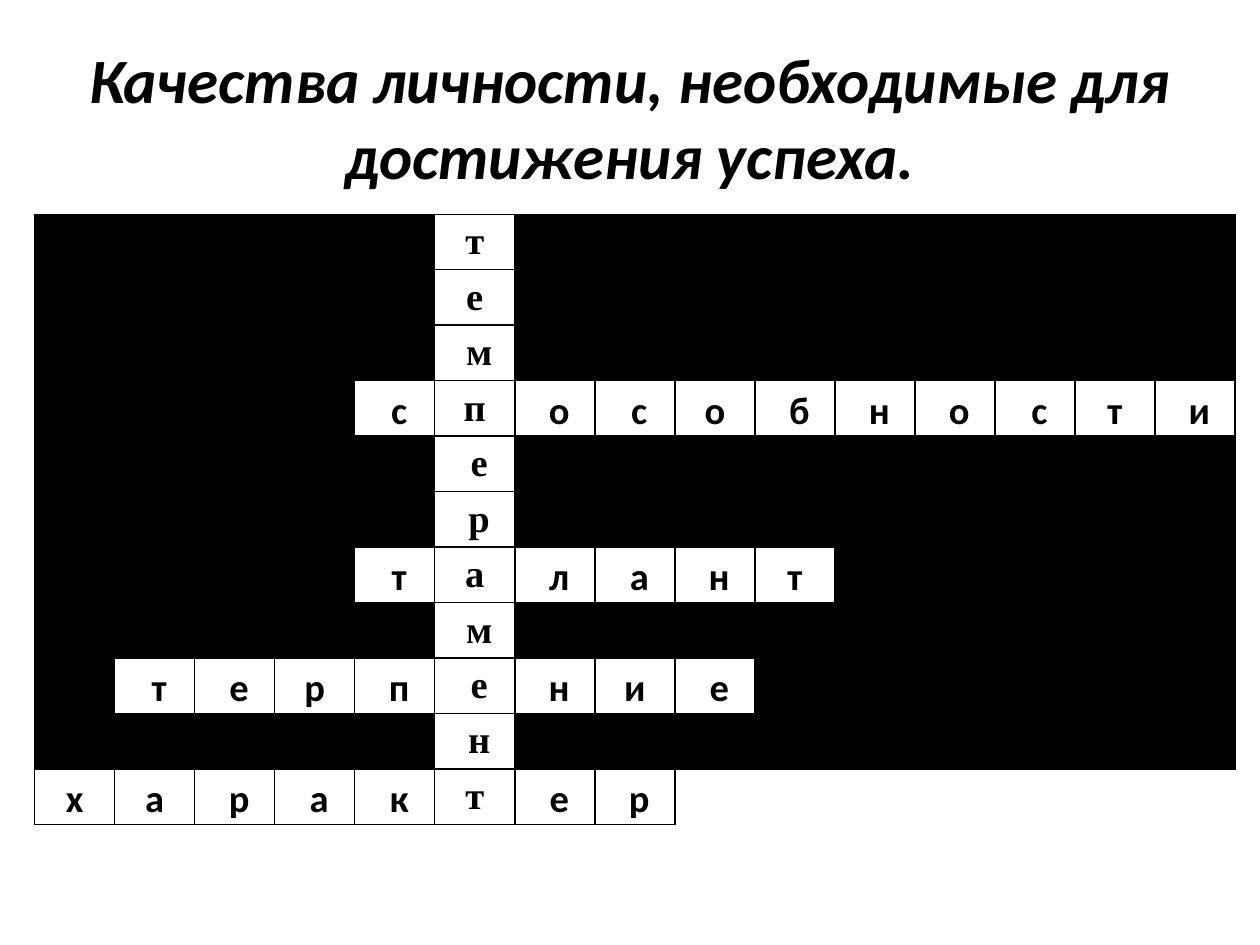
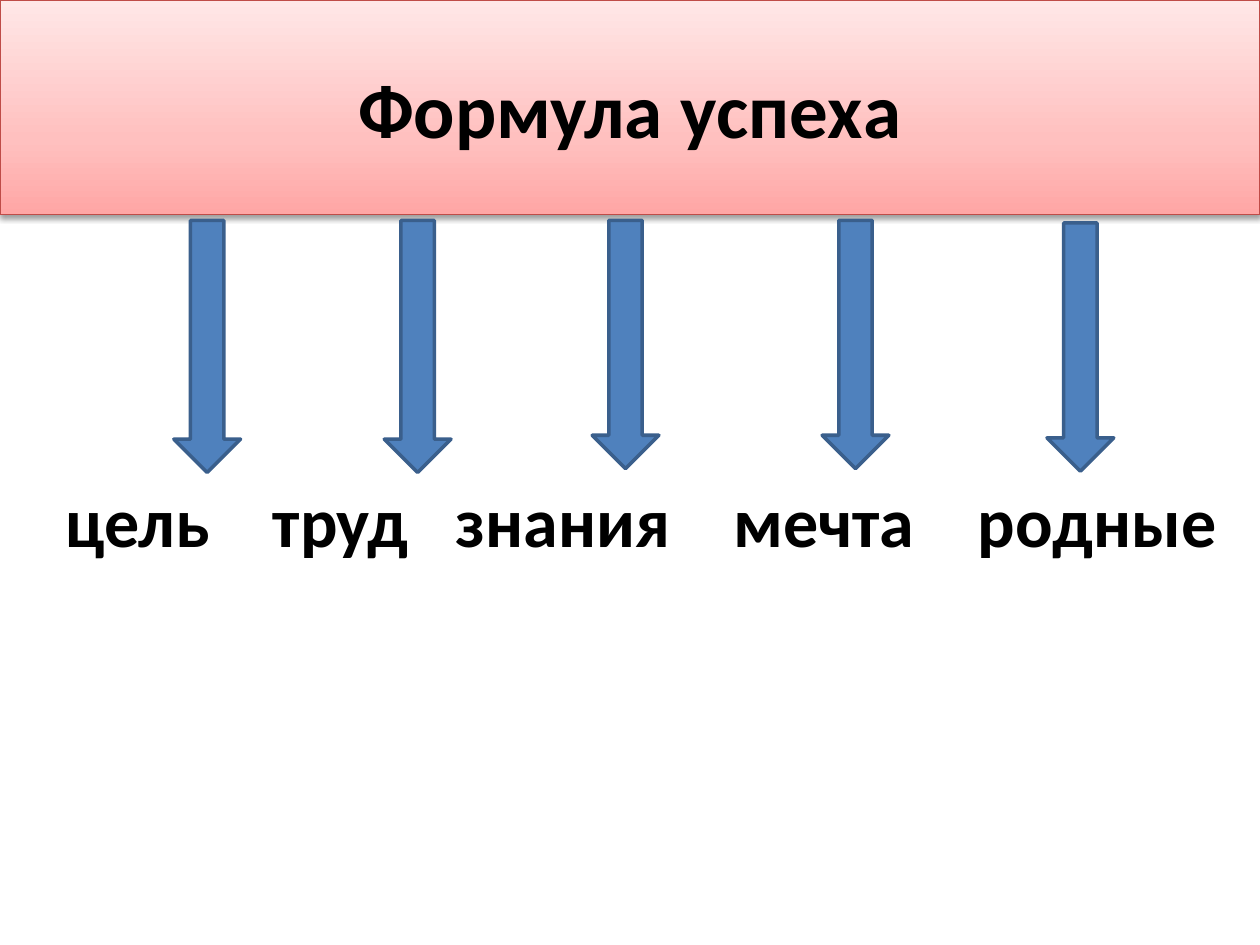
from dataclasses import dataclass
from typing import NamedTuple

from lxml import etree
from pptx import Presentation
from pptx.dml.color import RGBColor
from pptx.enum.shapes import MSO_SHAPE
from pptx.enum.text import MSO_ANCHOR, PP_ALIGN
from pptx.oxml.ns import qn
from pptx.util import Emu, Inches, Pt

ARROW = MSO_SHAPE.DOWN_ARROW
MIDDLE = MSO_ANCHOR.MIDDLE
CENTER = PP_ALIGN.CENTER
LEFT = PP_ALIGN.LEFT
WIDE, HIGH = Inches(10), Inches(7.5)
PLAIN_STYLE = "{2D5ABB26-0587-4C30-8999-92F81FD0307C}"


@dataclass(frozen=True)
class Theme:
    ink: str = "000000"
    blue: str = "4F81BD"
    navy: str = "3A5F8C"
    red: str = "BF4C48"
    band: tuple = ((0, "FFA6A5"), (35, "FFC0BF"), (100, "FFE7E7"))
    sans: str = "Calibri"
    serif: str = "Times New Roman"
    head: int = 36
    big: int = 44
    body: int = 40
    cell: int = 22


THEME = Theme()


class Box(NamedTuple):
    x: float
    y: float
    w: float
    h: float


class Word(NamedTuple):
    text: str
    row: int
    col: int
    flush: tuple
    down: bool = False


class Term(NamedTuple):
    text: str
    gap: float
    arrow: Box


ROWS, COLS, KEY = 11, 15, 5
TAIL = 8
GRID = Box(2.75, 22.67, 95.3, 64.58)
WORDS = (
    Word("способности", 3, 4, (1, 4, 9)),
    Word("талант", 6, 4, (5,)),
    Word("терпение", 8, 1, (2, 6)),
    Word("характер", 10, 0, (0, 1)),
    Word("темперамент", 0, KEY, (0, 1, 3, 6, 10), True),
)
TERMS = (
    Term("цель", 0, Box(13.8, 23.33, 5.3, 26.67)),
    Term("труд", 27.1, Box(30.5, 23.33, 5.3, 26.67)),
    Term("знания", 18.1, Box(47, 23.33, 5.3, 26.27)),
    Term("мечта", 27.1, Box(65.25, 23.33, 5.3, 26.27)),
    Term("родные", 27.1, Box(83.1, 23.6, 5.3, 26.27)),
)


def scale(box: Box) -> tuple:
    return tuple(Emu(round(part * side / 100))
                 for part, side in zip(box, (WIDE, HIGH, WIDE, HIGH)))


def place(shape, box: Box) -> None:
    shape.left, shape.top, shape.width, shape.height = scale(box)


def node(base, tag: str, **attrs):
    return etree.SubElement(base, qn(tag), {k: str(v) for k, v in attrs.items()})


def write(frame, text: str, *, size: int, font: str = THEME.sans,
          align=CENTER, slant: bool = False, space: float | None = None,
          track: float = 0):
    line = frame.paragraphs[0]
    line.alignment = align
    if space:
        line.line_spacing = space
    run = line.add_run()
    run.text = text
    run.font.name = font
    run.font.size = Pt(size)
    run.font.bold = True
    run.font.italic = slant
    run.font.color.rgb = RGBColor.from_string(THEME.ink)
    if track:
        run._r.get_or_add_rPr().set("spc", str(round(track * 100)))
    return line


def paint(shape, line: str, width: float, fill: str | None = None) -> None:
    if fill:
        shape.fill.solid()
        shape.fill.fore_color.rgb = RGBColor.from_string(fill)
    shape.line.color.rgb = RGBColor.from_string(line)
    shape.line.width = Pt(width)
    shape.shadow.inherit = False


def title(slide, text: str, box: Box, **style):
    shape = slide.shapes.title
    place(shape, box)
    shape.text_frame.vertical_anchor = MIDDLE
    write(shape.text_frame, text, **style)
    return shape


def edge(cell, sides: str) -> None:
    props = cell._tc.get_or_add_tcPr()
    for spot, side in enumerate(sides):
        line = etree.Element(qn(f"a:ln{side}"), w=str(Pt(1)))
        node(node(line, "a:solidFill"), "a:srgbClr", val=THEME.ink)
        props.insert(spot, line)


def letters() -> dict:
    found = {}
    for word in WORDS:
        font = THEME.serif if word.down else THEME.sans
        for step, char in enumerate(word.text):
            spot = ((word.row + step, word.col) if word.down
                    else (word.row, word.col + step))
            found[spot] = char, font, step in word.flush
    return found


def puzzle(slide) -> None:
    table = slide.shapes.add_table(ROWS, COLS, *scale(GRID)).table
    table.first_row = table.horz_banding = False
    table._tbl.tblPr.find(qn("a:tableStyleId")).text = PLAIN_STYLE
    _, _, wide, high = scale(GRID)
    for col in table.columns:
        col.width = Emu(wide // COLS)
    for row in table.rows:
        row.height = Emu(high // ROWS)
    found = letters()
    last = ROWS - 1
    for row in range(ROWS):
        for col in range(COLS):
            cell = table.cell(row, col)
            if (row, col) in found:
                char, font, flush = found[row, col]
                cell.fill.background()
                cell.margin_left = Inches(0.07 if flush else 0.14)
                cell.margin_right = Inches(0.07)
                cell.margin_top = cell.margin_bottom = 0
                write(cell.text_frame, char, size=THEME.cell, font=font, space=1.15)
            elif row < last:
                cell.fill.solid()
                cell.fill.fore_color.rgb = RGBColor.from_string(THEME.ink)
            else:
                cell.fill.background()
                edge(cell, "LT" if col == TAIL else "T")
                continue
            edge(cell, "LRTB")
    table.cell(last, TAIL).merge(table.cell(last, COLS - 1))


def blend(shape) -> None:
    shape.fill.gradient()
    shape.fill.gradient_angle = 90
    paint(shape, THEME.red, 0.75)
    props = shape._element.spPr
    stops = props.find(f".//{qn('a:gsLst')}")
    stops.clear()
    for spot, shade in THEME.band:
        node(node(stops, "a:gs", pos=spot * 1000), "a:srgbClr", val=shade)
    cast = node(props.find(qn("a:effectLst")), "a:outerShdw", blurRad=Pt(3.1),
                dist=Pt(1.6), dir=5400000, rotWithShape=0)
    node(node(cast, "a:srgbClr", val=THEME.ink), "a:alpha", val=38000)


def terms(slide) -> None:
    body = slide.placeholders[1]
    place(body, Box(4.2, 49.87, 95.8, 66))
    for term in TERMS:
        if term.gap:
            write(body.text_frame, " ", size=THEME.body, align=LEFT, track=term.gap)
        line = write(body.text_frame, term.text, size=THEME.body, align=LEFT)
        arrow = slide.shapes.add_shape(ARROW, *scale(term.arrow))
        paint(arrow, THEME.navy, 2, THEME.blue)
    props = line._p.get_or_add_pPr()
    props.set("marL", "0")
    props.set("indent", "0")
    node(props, "a:buNone")


def main() -> None:
    deck = Presentation()
    deck.slide_width, deck.slide_height = WIDE, HIGH
    first = deck.slides.add_slide(deck.slide_layouts[5])
    title(first, "Качества личности, необходимые для достижения успеха.",
          Box(5, 4, 90, 16.67), size=THEME.head, slant=True)
    puzzle(first)
    second = deck.slides.add_slide(deck.slide_layouts[1])
    blend(title(second, "Формула успеха", Box(0, 0, 100, 22.7), size=THEME.big))
    terms(second)
    deck.save("out.pptx")


if __name__ == "__main__":
    main()
